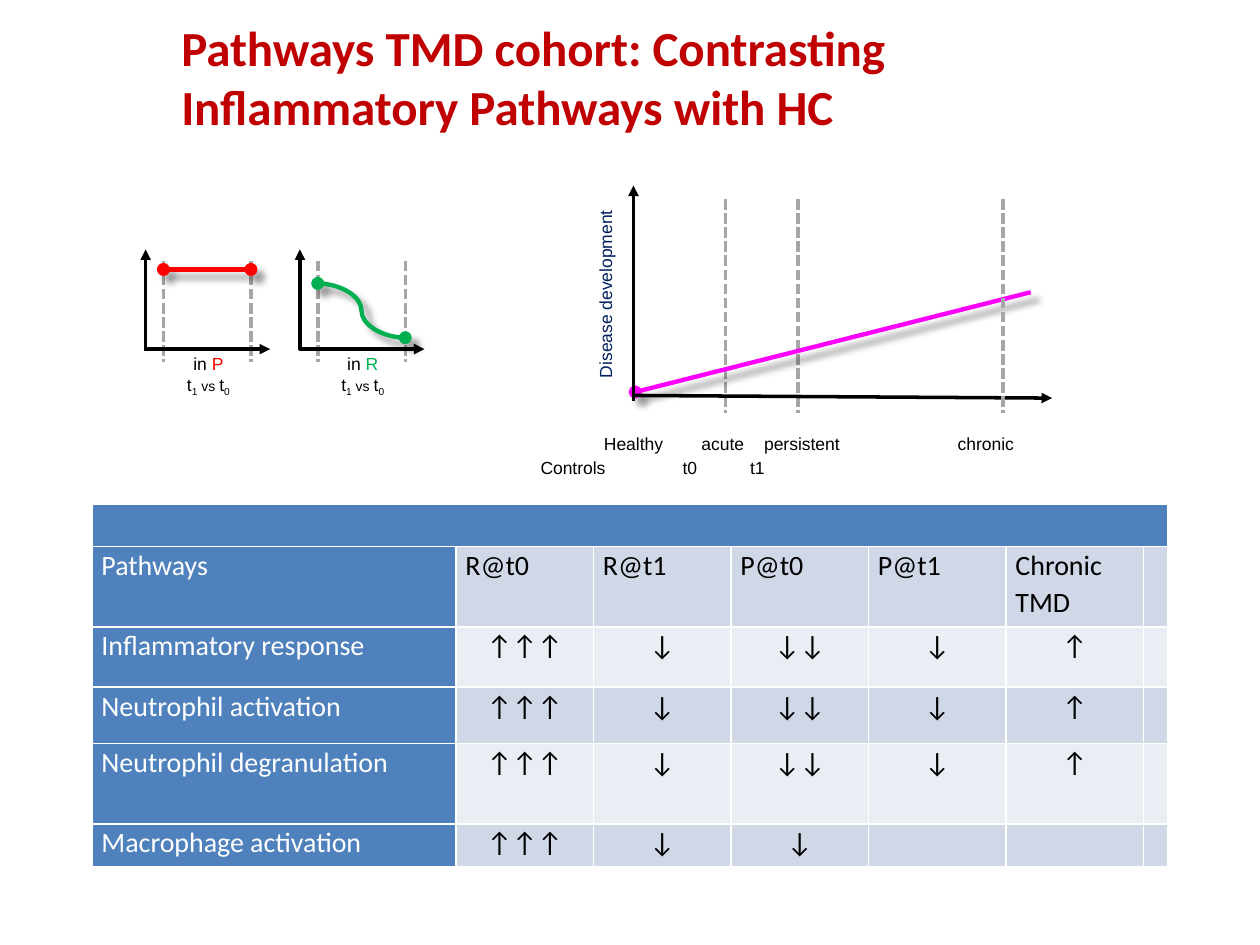
from dataclasses import dataclass
from typing import Any

from lxml import etree
from pptx import Presentation
from pptx import util as u
from pptx.dml.color import RGBColor
from pptx.enum import dml, shapes, text
from pptx.oxml import ns

BLACK = RGBColor(0, 0, 0)
WHITE = RGBColor(255, 255, 255)
DARK_RED = RGBColor(0xC0, 0, 0)
RED = RGBColor(255, 0, 0)
GREEN = RGBColor(0, 0xB0, 0x50)
MAGENTA = RGBColor(255, 0, 255)
NAVY = RGBColor(0, 0x20, 0x60)
GREY = RGBColor(0xA6, 0xA6, 0xA6)
BLUE = RGBColor(0x4F, 0x81, 0xBD)
PALE_BLUE = RGBColor(0xD0, 0xD8, 0xE8)
PALER_BLUE = RGBColor(0xE9, 0xED, 0xF4)
ALIGN = text.PP_ALIGN
STRAIGHT = shapes.MSO_CONNECTOR.STRAIGHT
CURVE = shapes.MSO_CONNECTOR.CURVE


def assign(target, values):
    for name, value in values.items():
        setattr(target, name, value)


def add_child(parent, tag, **attributes):
    return etree.SubElement(parent, ns.qn(tag), attributes)


@dataclass
class SlideBuilder:
    """Draws styled text, lines, small plots and tables on one slide."""

    slide: Any
    label_font: str = "Arial"
    body_font: str = "Calibri"
    label_size: float = 10
    body_size: float = 16

    def add_spans(self, para, spans, align=ALIGN.CENTER):
        para.alignment = align
        for words, color, extra in spans:
            span = para.add_run()
            span.text = words
            values = {"name": self.label_font, "size": u.Pt(self.label_size)}
            assign(span.font, values | extra.get("font", {}))
            span.font.color.rgb = color
            if "baseline" in extra:
                span._r.get_or_add_rPr().set("baseline", extra["baseline"])

    def add_text(self, bounds, paragraphs, align=ALIGN.CENTER, rotation=0, **frame_values):
        box = self.slide.shapes.add_textbox(*map(u.Pt, bounds))
        box.rotation = rotation
        frame = box.text_frame
        assign(frame, {"word_wrap": True} | frame_values)
        for index, spans in enumerate(paragraphs):
            para = frame.add_paragraph() if index else frame.paragraphs[0]
            self.add_spans(para, spans, align)

    def label(self, center, top, words):
        width = 90
        self.add_text((center - width / 2, top, width, 19.4), [[(words, BLACK, {})]])

    def line(self, start, end, color, width=2, kind=STRAIGHT, dash=None,
             head=None, tail=None, shadow=False):
        connector = self.slide.shapes.add_connector(kind, *map(u.Pt, (*start, *end)))
        connector.line.color.rgb = color
        assign(connector.line, {"width": u.Pt(width), "dash_style": dash})
        outline = connector.line._get_or_add_ln()
        for tag, arrow in (("a:headEnd", head), ("a:tailEnd", tail)):
            if arrow:
                add_child(outline, tag, type=arrow)
        effects = add_child(connector._element.spPr, "a:effectLst")
        if shadow:
            outer = add_child(effects, "a:outerShdw", blurRad=str(u.Pt(4)),
                              dist=str(u.Pt(6)), dir="2700000", algn="tl", rotWithShape="0")
            tint = add_child(outer, "a:srgbClr", val=str(BLACK))
            add_child(tint, "a:alpha", val="40000")

    def axis(self, start, end):
        self.line(start, end, BLACK, tail="triangle")

    def marker(self, x, top, bottom):
        self.line((x, top), (x, bottom), GREY, dash=dml.MSO_LINE.SQUARE_DOT)

    def trend(self, start, end, color, **options):
        self.line(start, end, color, width=2.5, head="oval", shadow=True, **options)

    def small_plot(self, left, name, color, start_y, end_y, kind):
        small = {"font": {"size": u.Pt(8)}}
        lowered = {"baseline": "-25000"}
        first, last = left + 10.2, left + 60.2
        self.add_text((left + 15.4, 198, 41, 31.5), [
            [("in ", BLACK, {}), (name, color, {})],
            [("t", BLACK, {}), ("1", BLACK, lowered), (" vs ", BLACK, small),
             ("t", BLACK, {}), ("0", BLACK, lowered)],
        ], word_wrap=False)
        for x in (first, last):
            self.marker(x, 149, 206.6)
        self.axis((left - 0.8, 199.5), (left + 71.2, 199.5))
        self.axis((left, 200), (left, 142.5))
        self.trend((first, start_y), (last, end_y), color, kind=kind, tail="oval")

    def border(self, cell):
        properties = cell._tc.get_or_add_tcPr()
        for side in "LRTB":
            edge = add_child(properties, f"a:ln{side}", w=str(u.Pt(1)))
            fill = add_child(edge, "a:solidFill")
            add_child(fill, "a:srgbClr", val=str(WHITE))

    def table(self, bounds, widths, heights, rows, space_after):
        grid = self.slide.shapes.add_table(
            len(heights), len(widths), *map(u.Pt, bounds)).table
        assign(grid, {"first_row": False, "horz_banding": False})
        for column, width in zip(grid.columns, widths):
            column.width = u.Pt(width)
        for row, height in zip(grid.rows, heights):
            row.height = u.Pt(height)
        grid.cell(0, 0).merge(grid.cell(0, len(widths) - 1))
        body = {"font": {"name": self.body_font, "size": u.Pt(self.body_size)}}
        margins = {"margin_left": u.Pt(5.4), "margin_right": u.Pt(5.4),
                   "margin_top": 0, "margin_bottom": 0}
        for r, row in enumerate(grid.rows):
            for c, cell in enumerate(row.cells):
                assign(cell, margins)
                self.border(cell)
                heading = r == 0 or c == 0
                cell.fill.solid()
                cell.fill.fore_color.rgb = BLUE if heading else (PALER_BLUE, PALE_BLUE)[r % 2]
                if c < len(rows[r]):
                    para = cell.text_frame.paragraphs[0]
                    assign(para, {"line_spacing": 1.07, "space_after": u.Pt(space_after[r])})
                    align = ALIGN.JUSTIFY if r == 1 or c == 0 else ALIGN.CENTER
                    self.add_spans(para, [(rows[r][c], WHITE if heading else BLACK, body)], align)


def main():
    deck = Presentation()
    assign(deck, {"slide_width": u.Pt(720), "slide_height": u.Pt(540)})
    page = SlideBuilder(deck.slides.add_slide(deck.slide_layouts[6]))

    title_style = {"font": {"name": page.body_font, "size": u.Pt(28), "bold": True}}
    title = "Pathways TMD cohort: Contrasting Inflammatory Pathways with HC"
    page.add_text((96.5, -8.6, 553.7, 104.4), [[(title, DARK_RED, title_style)]],
                  ALIGN.LEFT, vertical_anchor=text.MSO_ANCHOR.MIDDLE)

    page.small_plot(171.4, "R", GREEN, 162, 193, CURVE)
    page.small_plot(83.2, "P", RED, 154, 154, STRAIGHT)

    changes = ["↑↑↑", "↓", "↓↓", "↓", "↑"]
    rows = [
        [],
        ["Pathways", "R@t0", "R@t1", "P@t0", "P@t1", "Chronic TMD"],
        ["Inflammatory response", *changes],
        ["Neutrophil activation", *changes],
        ["Neutrophil degranulation", *changes],
        ["Macrophage activation", "↑↑↑", "↓", "↓"],
    ]
    page.table((52.6, 288, 615, 207), [208, *[78.6] * 5, 14],
               [24.4, 45.8, 34.4, 32.4, 45.8, 24.4], rows, [0, 6, 8, 8, 6, 6])

    for x in (414.5, 455.9):
        page.marker(x, 113.8, 236.2)
    page.trend((363, 224), (589, 167), MAGENTA)
    page.axis((363, 226), (601.2, 227.5))
    page.axis((362, 229), (362, 106))
    page.marker(573, 113.8, 236.2)
    page.add_text((278, 158.4, 136, 19.4), [[("Disease development", NAVY, {})]], rotation=270)
    for center, words in ((362, "Healthy"), (413, "acute"), (458.2, "persistent"),
                          (563.3, "chronic")):
        page.label(center, 244, words)
    for center, words in ((327.4, "Controls"), (394.2, "t0"), (432.8, "t1")):
        page.label(center, 257.8, words)

    deck.save("out.pptx")


if __name__ == "__main__":
    main()
